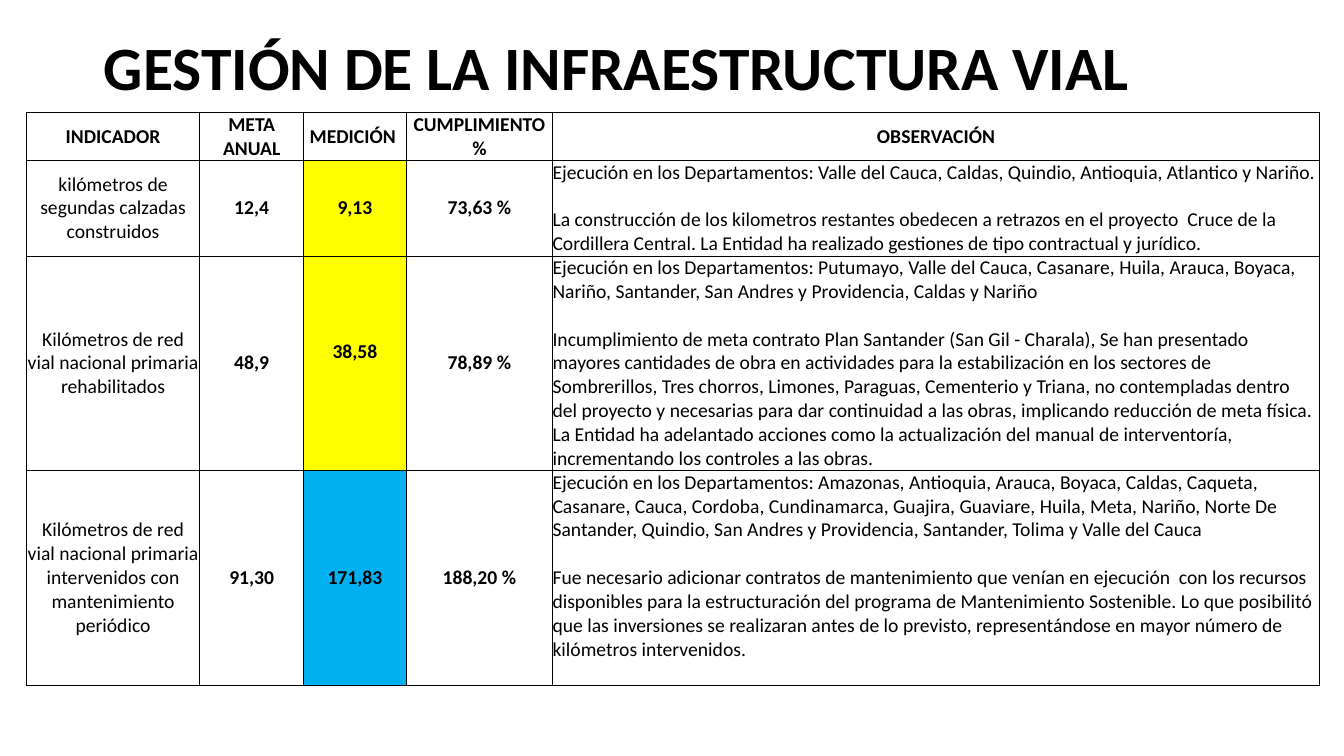
from lxml import etree
from pptx import Presentation
from pptx.dml.color import RGBColor
from pptx.enum import text
from pptx.oxml import ns
from pptx.util import Pt

BLACK = RGBColor(0x00, 0x00, 0x00)
WHITE = RGBColor(0xFF, 0xFF, 0xFF)
YELLOW = RGBColor(0xFF, 0xFF, 0x00)
BLUE = RGBColor(0x00, 0xB0, 0xF0)

FONT = "Calibri"
LINE_HEIGHT = 17
COLUMN_WIDTHS = [123.8, 74.2, 73.4, 104.4, 547.9]
ROW_HEIGHTS = [34, 68, 153, 153]
HEADINGS = ["INDICADOR", "META ANUAL", "MEDICIÓN ", "CUMPLIMIENTO %", "OBSERVACIÓN"]

# Each row: indicator, target, measurement, compliance, observation paragraphs
INDICATORS = [
    ["kilómetros de segundas calzadas construidos", "12,4", "9,13", "73,63 %",
     "Ejecución en los Departamentos: Valle del Cauca, Caldas, Quindio, "
     "Antioquia, Atlantico y Nariño.\n"
     "La construcción de los kilometros restantes obedecen a retrazos en el "
     "proyecto  Cruce de la Cordillera Central. La Entidad ha realizado "
     "gestiones de tipo contractual y jurídico."],
    ["Kilómetros de red vial nacional primaria rehabilitados",
     "48,9", "38,58", "78,89 %",
     "Ejecución en los Departamentos: Putumayo, Valle del Cauca, Casanare, "
     "Huila, Arauca, Boyaca, Nariño, Santander, San Andres y Providencia, "
     "Caldas y Nariño\n"
     "Incumplimiento de meta contrato Plan Santander (San Gil - Charala), Se "
     "han presentado mayores cantidades de obra en actividades para la "
     "estabilización en los sectores de Sombrerillos, Tres chorros, Limones, "
     "Paraguas, Cementerio y Triana, no contempladas dentro del proyecto y "
     "necesarias para dar continuidad a las obras, implicando reducción de "
     "meta física. La Entidad ha adelantado acciones como la actualización "
     "del manual de interventoría, incrementando los controles a las obras."],
    ["Kilómetros de red vial nacional primaria intervenidos con "
     "mantenimiento periódico", "91,30", "171,83", "188,20 %",
     "Ejecución en los Departamentos: Amazonas, Antioquia, Arauca, Boyaca, "
     "Caldas, Caqueta, Casanare, Cauca, Cordoba, Cundinamarca, Guajira, "
     "Guaviare, Huila, Meta, Nariño, Norte De Santander, Quindio, San Andres "
     "y Providencia, Santander, Tolima y Valle del Cauca\n"
     "Fue necesario adicionar contratos de mantenimiento que venían en "
     "ejecución  con los recursos disponibles para la estructuración del "
     "programa de Mantenimiento Sostenible. Lo que posibilitó que las "
     "inversiones se realizaran antes de lo previsto, representándose en "
     "mayor número de kilómetros intervenidos."],
]
MEASUREMENT_FILLS = [YELLOW, YELLOW, BLUE]


def style_font(font, size, bold):
    font.name = FONT
    font.size = Pt(size)
    font.bold = bold
    font.color.rgb = BLACK


def add_title(slide, wording):
    title = slide.shapes.title
    title.left, title.top, title.width, title.height = Pt(67), Pt(-1.5), Pt(828), Pt(104.4)
    frame = title.text_frame
    frame.text = wording
    frame.auto_size = text.MSO_AUTO_SIZE.NONE
    frame.vertical_anchor = text.MSO_ANCHOR.MIDDLE
    paragraph = frame.paragraphs[0]
    paragraph.alignment = text.PP_ALIGN.LEFT
    paragraph.line_spacing = 0.9
    style_font(paragraph.runs[0].font, 44, True)


def add_borders(cell, top_width):
    properties = cell._tc.get_or_add_tcPr()
    for side, width in (("L", 0.5), ("R", 0.5), ("T", top_width), ("B", 0.5)):
        line = etree.SubElement(properties, ns.qn(f"a:ln{side}"), w=str(Pt(width)))
        fill = etree.SubElement(line, ns.qn("a:solidFill"))
        etree.SubElement(fill, ns.qn("a:srgbClr"), val=str(BLACK))


def fill_cell(cell, wording, bold, align, color=None, top_width=0.5):
    cell.margin_left = cell.margin_right = cell.margin_top = cell.margin_bottom = 0
    cell.vertical_anchor = text.MSO_ANCHOR.MIDDLE
    add_borders(cell, top_width)
    if color is None:
        cell.fill.background()
    else:
        cell.fill.solid()
        cell.fill.fore_color.rgb = color
    cell.text_frame.text = wording
    for number, paragraph in enumerate(cell.text_frame.paragraphs):
        paragraph.alignment = align
        if number:
            paragraph.space_before = Pt(LINE_HEIGHT)
        style_font(paragraph.runs[0].font, 14, bold)


def add_indicator_table(slide):
    table = slide.shapes.add_table(
        len(ROW_HEIGHTS), len(COLUMN_WIDTHS), Pt(18.9), Pt(80.5),
        Pt(sum(COLUMN_WIDTHS)), Pt(sum(ROW_HEIGHTS))).table
    table.first_row = table.horz_banding = False
    for column, width in zip(table.columns, COLUMN_WIDTHS):
        column.width = Pt(width)
    for row, height in zip(table.rows, ROW_HEIGHTS):
        row.height = Pt(height)

    # Headings
    center, left = text.PP_ALIGN.CENTER, text.PP_ALIGN.LEFT
    for cell, heading in zip(table.rows[0].cells, HEADINGS):
        fill_cell(cell, heading, True, center, top_width=1)

    # Indicators
    for row, (values, measured) in enumerate(zip(INDICATORS, MEASUREMENT_FILLS), 1):
        fills = [None, None, measured, None, WHITE]
        for column, (value, color) in enumerate(zip(values, fills)):
            fill_cell(table.cell(row, column), value, column in (1, 2, 3),
                      left if column == 4 else center, color)

    # Two cells sit one line above the middle space
    for row, column in ((2, 2), (3, 4)):
        table.cell(row, column).margin_bottom = Pt(LINE_HEIGHT)


def main():
    deck = Presentation()
    deck.slide_width, deck.slide_height = Pt(960), Pt(540)
    slide = deck.slides.add_slide(deck.slide_layouts[5])
    add_title(slide, "GESTIÓN DE LA INFRAESTRUCTURA VIAL")
    add_indicator_table(slide)
    deck.save("out.pptx")


if __name__ == "__main__":
    main()
